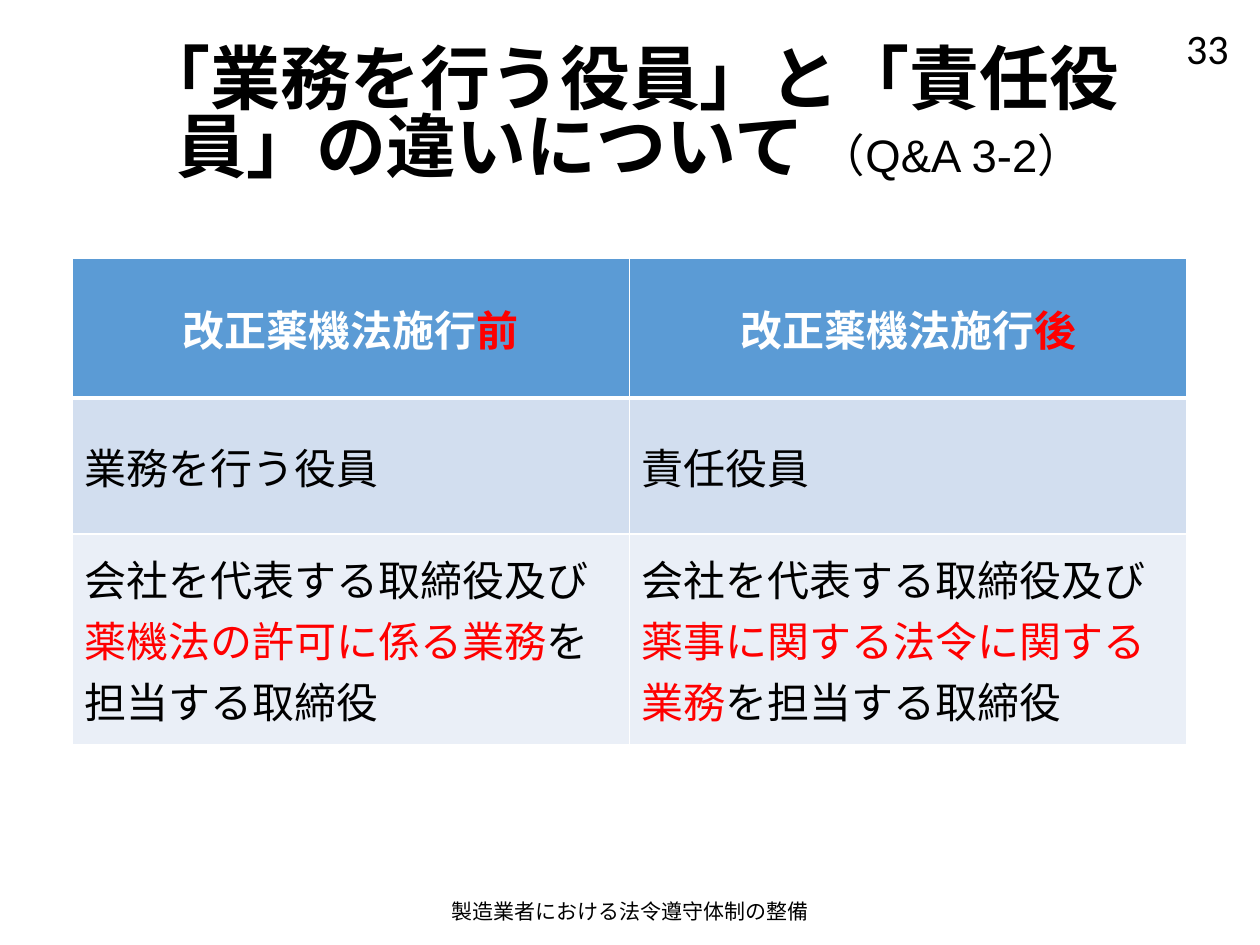
from lxml import etree
from pptx import Presentation
from pptx.dml.color import RGBColor
from pptx.enum import text
from pptx.oxml import ns
from pptx.util import Inches, Pt

COLORS = {"black": "000000", "white": "FFFFFF", "red": "FF0000",
          "header": "5B9BD5", "band": "D2DEEF", "pale": "EAEFF7"}
EAST_ASIAN = "Noto Sans CJK JP"


def write(frame, runs, align, **common):
    """Fill the first paragraph with (wording, format values) pairs."""
    frame.word_wrap = True
    paragraph = frame.paragraphs[0]
    paragraph.alignment = align
    for wording, own in runs:
        run = paragraph.add_run()
        run.text = wording
        values = {"name": "Calibri", "bold": False, "color": "black", **common, **own}
        run.font.color.rgb = RGBColor.from_string(COLORS[values.pop("color")])
        for key, value in values.items():
            setattr(run.font, key, value)
        ea = etree.SubElement(run.font._element, ns.qn("a:ea"))
        ea.set("typeface", EAST_ASIAN)
    return paragraph


def add_border(cell, side, points):
    line = etree.SubElement(cell._tc.get_or_add_tcPr(), ns.qn("a:" + side))
    line.set("w", str(Pt(points)))
    fill = etree.SubElement(line, ns.qn("a:solidFill"))
    etree.SubElement(fill, ns.qn("a:srgbClr")).set("val", COLORS["white"])


prs = Presentation()
prs.slide_width, prs.slide_height = Inches(10), Inches(7.5)
slide = prs.slides.add_slide(prs.slide_layouts[5])
LEFT, CENTER, RIGHT = text.PP_ALIGN.LEFT, text.PP_ALIGN.CENTER, text.PP_ALIGN.RIGHT
MIDDLE = text.MSO_ANCHOR.MIDDLE

# Title
title = slide.shapes.title
title.left, title.top = Inches(0.89), Inches(0.21)
title.width, title.height = Inches(8.22), Inches(1.45)
title.text_frame.vertical_anchor = MIDDLE
title.text_frame.auto_size = text.MSO_AUTO_SIZE.TEXT_TO_FIT_SHAPE
heading = write(title.text_frame, [
    ("「業務を行う役員」と「責任役員」の違いについて ", {"size": Pt(40), "bold": True}),
    ("（Q&A 3-2）", {"size": Pt(26), "name": "Arial"}),
], LEFT)
heading.alignment = CENTER
heading.line_spacing = 0.9

# Page number and footer
page_number = slide.shapes.add_textbox(Inches(7.79), Inches(0.13), Inches(2.06), Inches(0.4))
write(page_number.text_frame, [("33", {})], RIGHT, size=Pt(24))
footer = slide.shapes.add_textbox(Inches(3.31), Inches(7.03), Inches(3.38), Inches(0.4))
footer.text_frame.vertical_anchor = MIDDLE
write(footer.text_frame, [("製造業者における法令遵守体制の整備", {})], CENTER,
      size=Pt(12), name=EAST_ASIAN)

# Comparison table: before and after the revised act
RED = {"color": "red"}
ROWS = [
    (1.11, "header", CENTER, {"bold": True, "color": "white"},
     [[("改正薬機法施行", {}), (when, RED)] for when in "前後"]),
    (1.08, "band", LEFT, {},
     [[(role, {})] for role in ("業務を行う役員", "責任役員")]),
    (1.67, "pale", LEFT, {},
     [[("会社を代表する取締役及び", {}), (duty, RED), ("を担当する取締役", {})]
      for duty in ("薬機法の許可に係る業務", "薬事に関する法令に関する業務")]),
]
comparison = slide.shapes.add_table(3, 2, Inches(0.57), Inches(2.05),
                                    Inches(8.85), Inches(3.86)).table
for r, (height, fill, align, style, contents) in enumerate(ROWS):
    comparison.rows[r].height = Inches(height)
    for c, runs in enumerate(contents):
        cell = comparison.cell(r, c)
        cell.vertical_anchor = MIDDLE
        write(cell.text_frame, runs, align, size=Pt(24), **style)
        for side in ("lnL", "lnR", "lnT", "lnB"):
            thick = (r, side) in ((0, "lnB"), (1, "lnT"))
            add_border(cell, side, 3 if thick else 1)
        cell.fill.solid()
        cell.fill.fore_color.rgb = RGBColor.from_string(COLORS[fill])

prs.save("out.pptx")
